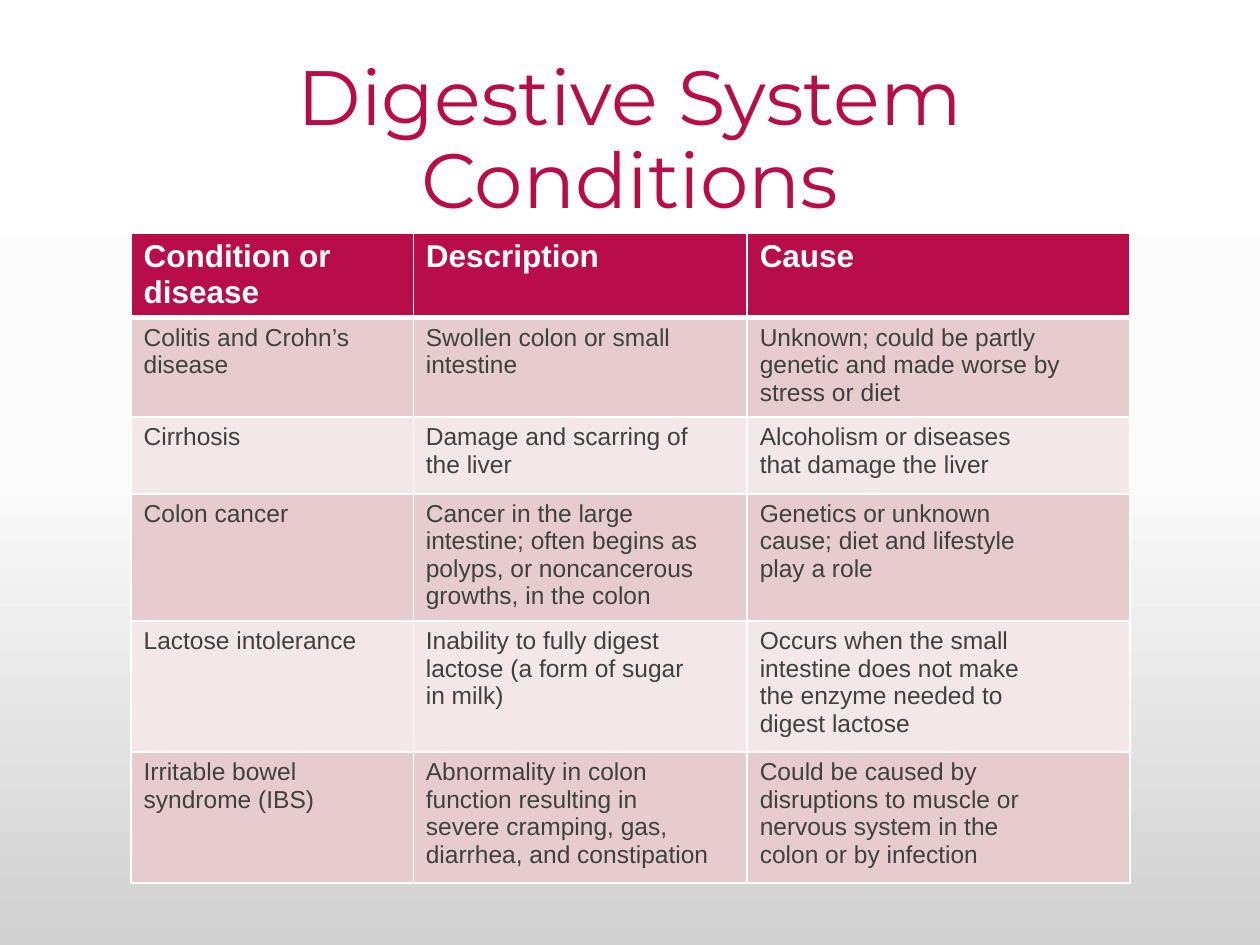
from copy import deepcopy
from dataclasses import dataclass

from lxml.etree import SubElement
from pptx import Presentation
from pptx.dml.color import RGBColor
from pptx.enum.text import MSO_ANCHOR, MSO_AUTO_SIZE, PP_ALIGN
from pptx.oxml.ns import qn
from pptx.util import Inches, Pt

COLORS = {
    "crimson": "B80D48",
    "white": "FFFFFF",
    "text": "3F403F",
    "dark_band": "E6CCCF",
    "light_band": "F3E7E9",
}
BACKGROUND_STOPS = [(0, "FFFFFF"), (0.5, "FBFBFB"), (1, "D1D1D1")]
COLUMN_WIDTHS = [2.24, 2.65, 3.04]
ROW_HEIGHTS = [0.67, 0.79, 0.61, 1.01, 1.04, 1.04]
HEADINGS = ["Condition or disease", "Description", "Cause"]


@dataclass
class Condition:
    name: str
    description: str
    cause: str


@dataclass
class CellStyle:
    fill: str
    color: str
    size: int
    bold: bool = False
    bottom_line: int = 1


CONDITIONS = [
    Condition(
        "Colitis and Crohn’s\ndisease",
        "Swollen colon or small\nintestine",
        "Unknown; could be partly genetic and made worse by stress or diet",
    ),
    Condition(
        "Cirrhosis",
        "Damage and scarring of\nthe liver",
        "Alcoholism or diseases\nthat damage the liver",
    ),
    Condition(
        "Colon cancer",
        "Cancer in the large\nintestine; often begins as\npolyps, or noncancerous\ngrowths, in the colon",
        "Genetics or unknown\ncause; diet and lifestyle\nplay a role",
    ),
    Condition(
        "Lactose intolerance",
        "Inability to fully digest\nlactose (a form of sugar\nin milk)",
        "Occurs when the small\nintestine does not make\nthe enzyme needed to\ndigest lactose",
    ),
    Condition(
        "Irritable bowel syndrome (IBS)",
        "Abnormality in colon\nfunction resulting in\nsevere cramping, gas,\ndiarrhea, and constipation",
        "Could be caused by\ndisruptions to muscle or\nnervous system in the\ncolon or by infection",
    ),
]
HEADER = CellStyle("crimson", "white", 18, bold=True, bottom_line=3)
BANDS = [CellStyle("dark_band", "text", 14), CellStyle("light_band", "text", 14)]


def rgb(name: str) -> RGBColor:
    return RGBColor.from_string(COLORS[name])


def paint_background(slide) -> None:
    fill = slide.background.fill
    fill.gradient()
    fill.gradient_angle = 270
    stop_list = next(slide.element.iter(qn("a:gsLst")))
    stop_list.append(deepcopy(stop_list[0]))
    for stop, (position, color) in zip(fill.gradient_stops, BACKGROUND_STOPS):
        stop.position = position
        stop.color.rgb = RGBColor.from_string(color)


def write_title(slide, text: str) -> None:
    title = slide.shapes.title
    title.left, title.top = Inches(0.69), Inches(0.4)
    title.width, title.height = Inches(8.62), Inches(1.45)
    frame = title.text_frame
    frame.text = text
    frame.word_wrap = True
    frame.auto_size = MSO_AUTO_SIZE.NONE
    frame.vertical_anchor = MSO_ANCHOR.MIDDLE
    para = frame.paragraphs[0]
    para.alignment = PP_ALIGN.CENTER
    para.line_spacing = 0.9
    para.font.name = "Montserrat"
    para.font.size = Pt(44)
    para.font.color.rgb = rgb("crimson")


def add_borders(cell, widths: dict[str, int]) -> None:
    """Draw white borders; call before the fill, which must follow them in the XML."""
    properties = cell._tc.get_or_add_tcPr()
    for side, width in widths.items():
        line = SubElement(properties, qn(f"a:ln{side}"), w=str(Pt(width)))
        solid = SubElement(line, qn("a:solidFill"))
        SubElement(solid, qn("a:srgbClr"), val=COLORS["white"])


def write_cell(cell, text: str, style: CellStyle, top_line: int) -> None:
    add_borders(cell, {"L": 1, "R": 1, "T": top_line, "B": style.bottom_line})
    cell.fill.solid()
    cell.fill.fore_color.rgb = rgb(style.fill)
    cell.text = text
    for para in cell.text_frame.paragraphs:
        para.font.name = "Arial"
        para.font.size = Pt(style.size)
        para.font.bold = style.bold
        para.font.color.rgb = rgb(style.color)


def add_conditions_table(slide) -> None:
    table = slide.shapes.add_table(
        len(ROW_HEIGHTS), len(COLUMN_WIDTHS), Inches(1.04), Inches(1.85),
        Inches(sum(COLUMN_WIDTHS)), Inches(sum(ROW_HEIGHTS)),
    ).table
    for column, width in zip(table.columns, COLUMN_WIDTHS):
        column.width = Inches(width)
    rows = [HEADINGS] + [[c.name, c.description, c.cause] for c in CONDITIONS]
    top_line = 1
    for index, (row, height, texts) in enumerate(zip(table.rows, ROW_HEIGHTS, rows)):
        row.height = Inches(height)
        style = BANDS[(index - 1) % 2] if index else HEADER
        for cell, text in zip(row.cells, texts):
            write_cell(cell, text, style, top_line)
        top_line = style.bottom_line


def main() -> None:
    deck = Presentation()
    deck.slide_width, deck.slide_height = Inches(10), Inches(7.5)
    slide = deck.slides.add_slide(deck.slide_layouts.get_by_name("Title Only"))
    paint_background(slide)
    write_title(slide, "Digestive System Conditions")
    add_conditions_table(slide)
    deck.save("out.pptx")


if __name__ == "__main__":
    main()
